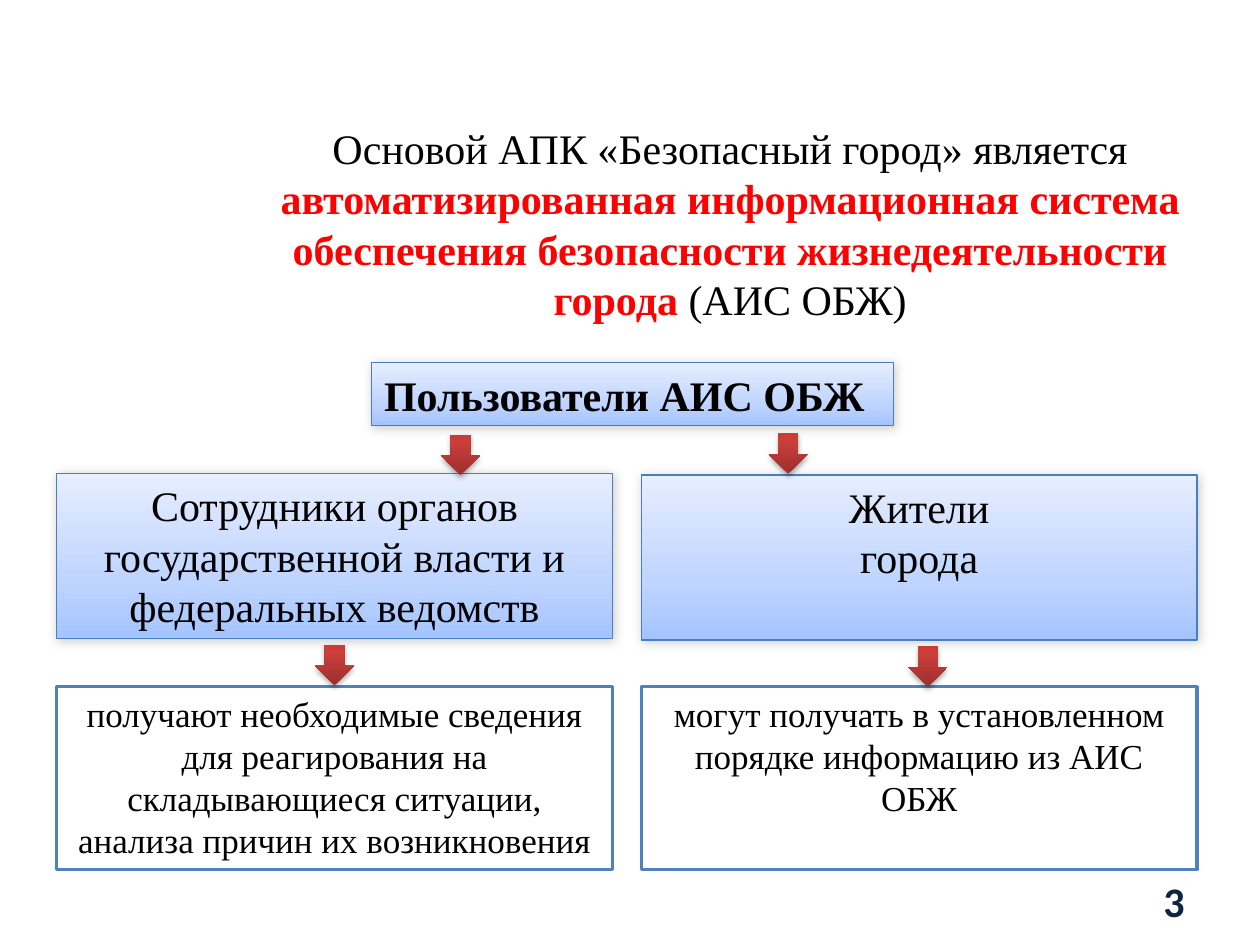
from dataclasses import dataclass

from lxml.etree import SubElement
from pptx import Presentation
from pptx.dml.color import RGBColor
from pptx.enum.shapes import MSO_SHAPE as Shape
from pptx.enum.text import MSO_ANCHOR as Anchor, PP_ALIGN as Align
from pptx.oxml.ns import qn
from pptx.util import Inches, Pt

COLORS = {
    "text": "000000", "accent": "FF0000", "number": "0F243E", "white": "FFFFFF",
    "head_line": "4B7EBC", "detail_line": "4F81BD", "shadow": "000000",
}
HEAD_STOPS = [(0, "A4C4FF"), (35, "BFD4FF"), (100, "E6EEFF")]
ARROW_STOPS = [(0, "9C2F2D"), (80, "CB3E3A"), (100, "CE3B37")]
SERIF = "Times New Roman"


@dataclass
class Box:
    left: float
    top: float
    width: float
    height: float
    lines: list[str]
    size: int = 24
    bold: bool = False
    align: Align = Align.CENTER
    gradient: bool = True


@dataclass
class Shadow:
    alpha: int
    blur: float
    dist: float
    angle: int


HEAD_SHADOW = Shadow(20, 6, 1, 45)
ARROW_SHADOW = Shadow(35, 3.1, 1.8, 90)


def rgb(name: str) -> RGBColor:
    return RGBColor.from_string(COLORS[name])


def add_run(p, text: str, size: int = 24, color: str = "text",
            bold: bool = False, font: str = SERIF) -> None:
    r = p.add_run()
    r.text = text
    r.font.name = font
    r.font.size = Pt(size)
    r.font.bold = bold
    r.font.color.rgb = rgb(color)


def add_color(parent, value: str):
    return SubElement(parent, qn("a:srgbClr"), val=value)


def set_gradient(sp, stops: list[tuple[int, str]]) -> None:
    sp.fill.gradient()
    sp.fill.gradient_angle = 90
    gs_list = sp._element.spPr.find(qn("a:gradFill")).find(qn("a:gsLst"))
    for gs in list(gs_list):
        gs_list.remove(gs)
    for pos, value in stops:
        add_color(SubElement(gs_list, qn("a:gs"), pos=str(pos * 1000)), value)


def set_shadow(sp, shadow: Shadow) -> None:
    effects = sp._element.spPr.find(qn("a:effectLst"))
    outer = SubElement(effects, qn("a:outerShdw"), blurRad=str(Pt(shadow.blur)),
                       dist=str(Pt(shadow.dist)), dir=str(shadow.angle * 60000),
                       rotWithShape="0")
    color = add_color(outer, COLORS["shadow"])
    SubElement(color, qn("a:alpha"), val=str(shadow.alpha * 1000))


def add_box(slide, box: Box) -> None:
    sp = slide.shapes.add_shape(Shape.RECTANGLE, Inches(box.left), Inches(box.top),
                                Inches(box.width), Inches(box.height))
    sp.shadow.inherit = False
    if box.gradient:
        set_gradient(sp, HEAD_STOPS)
        set_shadow(sp, HEAD_SHADOW)
    else:
        sp.fill.solid()
        sp.fill.fore_color.rgb = rgb("white")
    sp.line.color.rgb = rgb("head_line" if box.gradient else "detail_line")
    sp.line.width = Pt(0.75 if box.gradient else 2)
    tf = sp.text_frame
    tf.word_wrap = True
    tf.vertical_anchor = Anchor.TOP
    for i, line in enumerate(box.lines):
        p = tf.add_paragraph() if i else tf.paragraphs[0]
        p.alignment = box.align
        add_run(p, line, box.size, bold=box.bold)


def add_arrow(slide, left: float, top: float) -> None:
    sp = slide.shapes.add_shape(Shape.DOWN_ARROW, Inches(left), Inches(top),
                                Inches(0.31), Inches(0.32))
    sp.shadow.inherit = False
    set_gradient(sp, ARROW_STOPS)
    set_shadow(sp, ARROW_SHADOW)
    sp.line.fill.background()


def add_title(slide) -> None:
    title = slide.shapes.title
    title.left, title.top = Inches(0.75), Inches(0.92)
    title.width, title.height = Inches(10.09), Inches(1.72)
    tf = title.text_frame
    tf.word_wrap = True
    tf.vertical_anchor = Anchor.TOP
    # Each line is a list of (text, highlighted) runs
    lines = [
        [("Основой АПК «Безопасный город» является", False)],
        [("автоматизированная информационная система", True)],
        [("обеспечения безопасности жизнедеятельности", True)],
        [("города ", True), ("(АИС ОБЖ)", False)],
    ]
    for i, runs in enumerate(lines):
        p = tf.add_paragraph() if i else tf.paragraphs[0]
        p.alignment = Align.CENTER
        for text, strong in runs:
            add_run(p, text, color="accent" if strong else "text", bold=strong)


def add_number(slide, number: str) -> None:
    tb = slide.shapes.add_textbox(Inches(7.17), Inches(6.95), Inches(2.33), Inches(0.4))
    tf = tb.text_frame
    tf.word_wrap = True
    tf.vertical_anchor = Anchor.MIDDLE
    p = tf.paragraphs[0]
    p.alignment = Align.RIGHT
    add_run(p, number, color="number", bold=True, font="Calibri")


def main() -> None:
    prs = Presentation()
    prs.slide_width, prs.slide_height = Inches(10), Inches(7.5)
    slide = prs.slides.add_slide(prs.slide_layouts[5])
    add_title(slide)
    add_number(slide, "3")

    # Users heading, then one column per user group
    left_col, right_col, width = 0.45, 5.09, 4.41
    boxes = [
        Box(2.95, 2.88, 4.14, 0.5, ["Пользователи АИС ОБЖ"], bold=True, align=Align.LEFT),
        Box(left_col, 3.76, width, 1.31,
            ["Сотрудники органов государственной власти и федеральных ведомств"]),
        Box(right_col, 3.77, width, 1.31, ["Жители", "города"]),
        Box(left_col, 5.45, width, 1.45,
            ["получают необходимые сведения",
             "для реагирования на складывающиеся ситуации, анализа причин их возникновения"],
            size=20, gradient=False),
        Box(right_col, 5.45, width, 1.45,
            ["могут получать в установленном порядке информацию из АИС ОБЖ"],
            size=20, gradient=False),
    ]
    for box in boxes:
        add_box(slide, box)

    # Arrows between the levels
    for left, top in [(3.5, 3.45), (6.1, 3.44), (2.5, 5.12), (7.21, 5.13)]:
        add_arrow(slide, left, top)

    prs.save("out.pptx")


if __name__ == "__main__":
    main()
